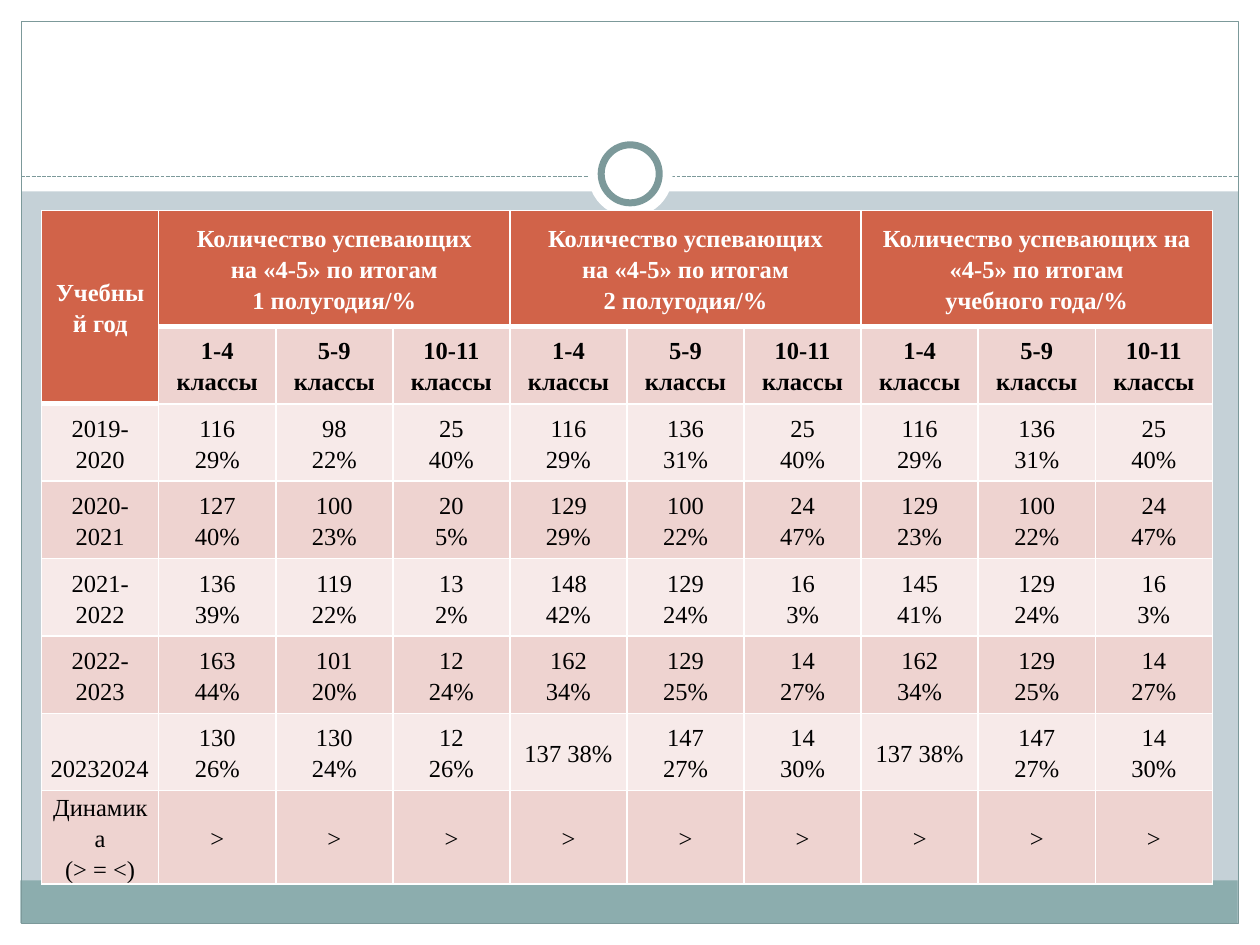
import dataclasses

import pptx
import pptx.dml.color
import pptx.enum.dml
import pptx.enum.shapes
import pptx.enum.text
import pptx.oxml
import pptx.oxml.ns
import pptx.util

Cm = pptx.util.Cm
Pt = pptx.util.Pt
Shape = pptx.enum.shapes.MSO_SHAPE
Align = pptx.enum.text.PP_ALIGN


@dataclasses.dataclass(frozen=True)
class Theme:
    background: str = "C5D1D7"
    white: str = "FFFFFF"
    black: str = "000000"
    frame: str = "7C999A"
    footer: str = "8CADAE"
    header: str = "D16349"
    band_dark: str = "EED3D0"
    band_light: str = "F7EAE9"
    font: str = "Times New Roman"
    text_size: float = 14
    line_spacing: float = 1.15
    thin: float = 0.75
    ring: float = 4
    grid: float = 1
    header_rule: float = 3


def rgb(color):
    return pptx.dml.color.RGBColor.from_string(color)


class SlideBuilder:
    def __init__(self, slide, theme):
        self.slide = slide
        self.theme = theme
        slide.background.fill.solid()
        slide.background.fill.fore_color.rgb = rgb(theme.background)

    def shape(self, kind, left, top, width, height, fill=None, line=None, weight=None):
        shape = self.slide.shapes.add_shape(kind, Cm(left), Cm(top), Cm(width), Cm(height))
        shape.shadow.inherit = False
        if fill:
            shape.fill.solid()
            shape.fill.fore_color.rgb = rgb(fill)
        else:
            shape.fill.background()
        if line:
            shape.line.color.rgb = rgb(line)
            shape.line.width = Pt(weight)
        else:
            shape.line.fill.background()

    def dashed_rule(self, left, right, top):
        rule = self.slide.shapes.add_connector(
            pptx.enum.shapes.MSO_CONNECTOR.STRAIGHT, Cm(left), Cm(top), Cm(right), Cm(top))
        rule.line.color.rgb = rgb(self.theme.frame)
        rule.line.width = Pt(self.theme.thin)
        rule.line.dash_style = pptx.enum.dml.MSO_LINE.SQUARE_DOT
        rule._element.spPr.append(pptx.oxml.parse_xml(
            f'<a:effectLst {pptx.oxml.ns.nsdecls("a")}/>'))

    def table(self, left, top, column_width, row_heights, columns):
        table = self.slide.shapes.add_table(
            len(row_heights), columns, Cm(left), Cm(top),
            Cm(column_width * columns), Cm(sum(row_heights))).table
        table.first_row = False
        table.horz_banding = False
        for column in table.columns:
            column.width = Cm(column_width)
        for row, height in zip(table.rows, row_heights):
            row.height = Cm(height)
        return table

    def cell(self, cell, text, fill, color, bold=False, align=Align.CENTER):
        cell.text_frame.text = text
        cell.vertical_anchor = pptx.enum.text.MSO_ANCHOR.MIDDLE
        cell.margin_left = cell.margin_right = Cm(0.18)
        cell.margin_top = cell.margin_bottom = 0
        cell.fill.solid()
        cell.fill.fore_color.rgb = rgb(fill)
        for paragraph in cell.text_frame.paragraphs:
            paragraph.alignment = align
            paragraph.line_spacing = self.theme.line_spacing
            paragraph.font.name = self.theme.font
            paragraph.font.size = Pt(self.theme.text_size)
            paragraph.font.bold = bold
            paragraph.font.color.rgb = rgb(color)

    def borders(self, cell, top, bottom):
        grid = self.theme.grid
        sides = {"lnL": grid, "lnR": grid, "lnT": top, "lnB": bottom}
        properties = cell._tc.get_or_add_tcPr()
        for position, (side, weight) in enumerate(sides.items()):
            properties.insert(position, pptx.oxml.parse_xml(
                f'<a:{side} {pptx.oxml.ns.nsdecls("a")} w="{Pt(weight)}"><a:solidFill>'
                f'<a:srgbClr val="{self.theme.white}"/></a:solidFill></a:{side}>'))


PERIODS = [
    "Количество успевающих\nна «4-5» по итогам\n1 полугодия/%",
    "Количество успевающих\nна «4-5» по итогам\n2 полугодия/%",
    "Количество успевающих на «4-5» по итогам\nучебного года/%",
]
GRADES = ["1-4 классы", "5-9 классы", "10-11 классы"]
YEARS = [
    ["2019-2020", "116\n29%", "98\n22%", "25\n40%", "116\n29%", "136\n31%", "25\n40%",
     "116\n29%", "136\n31%", "25\n40%"],
    ["2020-2021", "127\n40%", "100\n23%", "20\n5%", "129\n29%", "100\n22%", "24\n47%",
     "129\n23%", "100\n22%", "24\n47%"],
    ["2021-2022", "136\n39%", "119\n22%", "13\n2%", "148\n42%", "129\n24%", "16\n3%",
     "145\n41%", "129\n24%", "16\n3%"],
    ["2022-2023", "163\n44%", "101\n20%", "12\n24%", "162\n34%", "129\n25%", "14\n27%",
     "162\n34%", "129\n25%", "14\n27%"],
    [" 20232024", "130\n26%", "130\n24%", "12\n26%", "137 38%", "147\n27%", "14\n30%",
     "137 38%", "147\n27%", "14\n30%"],
    ["Динамика\n(> = <)"] + [">"] * 9,
]


def draw_frame(builder):
    theme = builder.theme
    margins = [(0, 18.62, 25.4, 0.43), (0, 0, 25.4, 3.86),
               (0, 0, 0.43, 19.05), (24.97, 0, 0.43, 19.05)]
    for margin in margins:
        builder.shape(Shape.RECTANGLE, *margin, fill=theme.white)
    builder.shape(Shape.RECTANGLE, 0.41, 17.75, 24.54, 0.86, fill=theme.footer)
    builder.shape(Shape.RECTANGLE, 0.43, 0.43, 24.54, 18.19, line=theme.frame, weight=theme.thin)
    builder.dashed_rule(0.43, 24.97, 3.56)
    builder.shape(Shape.OVAL, 11.86, 2.67, 1.7, 1.7, fill=theme.white)
    builder.shape(Shape.OVAL, 12.12, 2.92, 1.17, 1.17,
                  fill=theme.white, line=theme.frame, weight=theme.ring)


def draw_results(builder):
    theme = builder.theme
    columns = 1 + len(PERIODS) * len(GRADES)
    table = builder.table(0.84, 4.24, 2.36, [2.34] + [1.56] * 6 + [1.88], columns)

    year_title = table.cell(0, 0)
    year_title.merge(table.cell(1, 0))
    builder.cell(year_title, "Учебный год", theme.header, theme.white, bold=True)
    for index, period in enumerate(PERIODS):
        first = 1 + index * len(GRADES)
        period_title = table.cell(0, first)
        period_title.merge(table.cell(0, first + len(GRADES) - 1))
        builder.cell(period_title, period, theme.header, theme.white, bold=True)
    for column, grade in enumerate(GRADES * len(PERIODS), start=1):
        builder.cell(table.cell(1, column), grade, theme.band_dark, theme.black, bold=True)

    for row, results in enumerate(YEARS, start=2):
        band = theme.band_dark if row % 2 else theme.band_light
        for column, result in enumerate(results):
            align = Align.LEFT if result.startswith(" ") else Align.CENTER
            builder.cell(table.cell(row, column), result, band, theme.black, align=align)

    for row in range(len(table.rows)):
        for column in range(columns):
            last_header_row = 0 if column else 1
            top = theme.header_rule if row == last_header_row + 1 else theme.grid
            bottom = theme.header_rule if row == last_header_row or (row, column) == (0, 0) else theme.grid
            builder.borders(table.cell(row, column), top, bottom)


def main():
    presentation = pptx.Presentation()
    presentation.slide_width = Cm(25.4)
    presentation.slide_height = Cm(19.05)
    slide = presentation.slides.add_slide(presentation.slide_layouts[6])
    builder = SlideBuilder(slide, Theme())
    draw_frame(builder)
    draw_results(builder)
    presentation.save("out.pptx")


if __name__ == "__main__":
    main()
